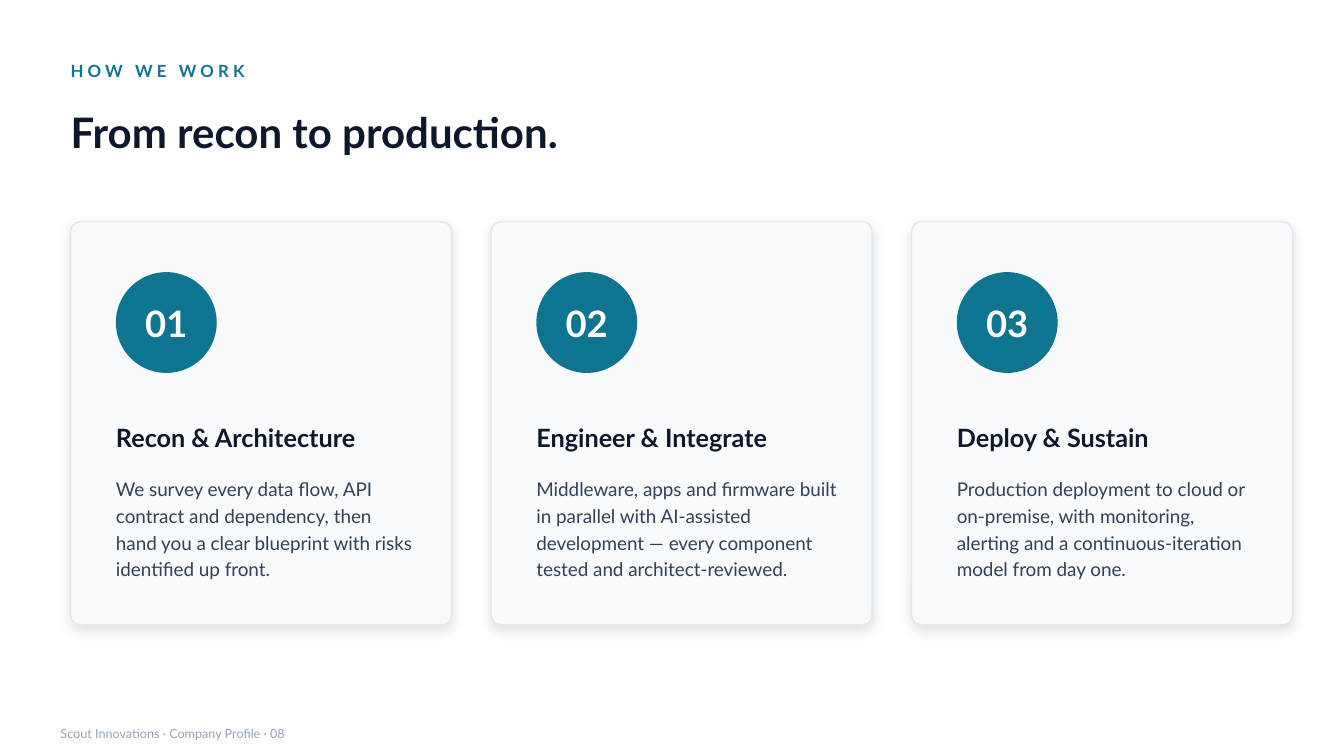
from dataclasses import dataclass

from lxml.etree import SubElement
from pptx import Presentation
from pptx.dml.color import RGBColor
from pptx.enum.shapes import MSO_SHAPE as Shape
from pptx.enum.text import MSO_ANCHOR as Anchor, MSO_AUTO_SIZE as AutoSize, PP_ALIGN as Align
from pptx.oxml.ns import qn
from pptx.util import Inches, Pt


@dataclass(frozen=True)
class Theme:
    font: str = "Lato"
    paper: str = "FFFFFF"
    accent: str = "0E7490"
    ink: str = "0F172A"
    body: str = "334155"
    muted: str = "94A3B8"
    card: str = "F8FAFC"
    border: str = "E2E8F0"
    kicker_size: float = 12
    title_size: float = 30
    number_size: float = 26
    heading_size: float = 18
    body_size: float = 13.5
    footer_size: float = 9


THEME = Theme()

STEPS = [
    ("Recon & Architecture",
     "We survey every data flow, API contract and dependency, then hand you "
     "a clear blueprint with risks identified up front."),
    ("Engineer & Integrate",
     "Middleware, apps and firmware built in parallel with AI-assisted "
     "development — every component tested and architect-reviewed."),
    ("Deploy & Sustain",
     "Production deployment to cloud or on-premise, with monitoring, "
     "alerting and a continuous-iteration model from day one."),
]


def rgb(value):
    return RGBColor.from_string(value)


def apply(target, formats):
    for name, value in formats.items():
        setattr(target, name, value)


def write(holder, text, size, color, bold=False, anchor=Anchor.MIDDLE,
          align=Align.LEFT, spacing=None):
    frame = holder.text_frame
    apply(frame, dict(word_wrap=True, auto_size=AutoSize.NONE, vertical_anchor=anchor,
                      margin_left=0, margin_top=0, margin_right=0, margin_bottom=0))
    paragraph = frame.paragraphs[0]
    apply(paragraph, dict(alignment=align, line_spacing=spacing))
    run = paragraph.add_run()
    run.text = text
    apply(run.font, dict(name=THEME.font, size=Pt(size), bold=bold))
    run.font.color.rgb = rgb(color)
    return run


def add_label(slide, box, text, size, color, **formats):
    label = slide.shapes.add_textbox(*map(Inches, box))
    return write(label, text, size, color, **formats)


def add_panel(slide, kind, box, fill):
    panel = slide.shapes.add_shape(kind, *map(Inches, box))
    panel.shadow.inherit = False
    panel.fill.solid()
    panel.fill.fore_color.rgb = rgb(fill)
    panel.line.fill.background()
    return panel


def add_soft_shadow(panel):
    effects = panel._element.spPr.find(qn("a:effectLst"))
    shadow = SubElement(effects, qn("a:outerShdw"), blurRad=str(Pt(9)), dist=str(Pt(3)),
                        dir="5400000", algn="ctr", rotWithShape="0")
    color = SubElement(shadow, qn("a:srgbClr"), val=THEME.ink)
    SubElement(color, qn("a:alpha"), val="12000")


def add_header(slide, box, kicker, headline):
    left, top, width, height = box
    kicker_run = add_label(slide, (left, top, width, 0.3), kicker,
                           THEME.kicker_size, THEME.accent, bold=True)
    kicker_run.font._element.set("spc", "300")
    title = slide.shapes.title
    apply(title, dict(left=Inches(left), top=Inches(top + 0.31),
                      width=Inches(width), height=Inches(height - 0.31)))
    write(title, headline, THEME.title_size, THEME.ink, bold=True)


def add_step(slide, box, number, heading, description):
    left, top, width, height = box
    card = add_panel(slide, Shape.ROUNDED_RECTANGLE, box, THEME.card)
    card.adjustments[0] = 0.026
    card.line.color.rgb = rgb(THEME.border)
    card.line.width = Pt(1)
    add_soft_shadow(card)

    inner = left + 0.45
    badge = add_panel(slide, Shape.OVAL, (inner, top + 0.5, 1, 1), THEME.accent)
    write(badge, f"{number:02}", THEME.number_size, THEME.paper, bold=True,
          align=Align.CENTER)
    add_label(slide, (inner, top + 1.75, width - 0.9, 0.8), heading,
              THEME.heading_size, THEME.ink, bold=True, spacing=0.98)
    add_label(slide, (inner, top + 2.5, width - 0.8, height - 2.6), description,
              THEME.body_size, THEME.body, anchor=Anchor.TOP, spacing=1.18)


def add_steps(slide, box, steps, gap):
    left, top, width, height = box
    card_width = (width - gap * (len(steps) - 1)) / len(steps)
    for index, (heading, description) in enumerate(steps):
        card_left = left + index * (card_width + gap)
        add_step(slide, (card_left, top, card_width, height), index + 1,
                 heading, description)


def add_footer(slide, box, text):
    add_label(slide, box, text, THEME.footer_size, THEME.muted)


def main():
    deck = Presentation()
    apply(deck, dict(slide_width=Inches(13.33), slide_height=Inches(7.5)))
    slide = deck.slides.add_slide(deck.slide_layouts[5])
    slide.background.fill.solid()
    slide.background.fill.fore_color.rgb = rgb(THEME.paper)
    add_header(slide, (0.7, 0.55, 12, 1.21), "HOW WE WORK", "From recon to production.")
    add_steps(slide, (0.7, 2.2, 12.12, 4), STEPS, gap=0.39)
    add_footer(slide, (0.6, 7.13, 9, 0.3), "Scout Innovations · Company Profile · 08")
    deck.save("out.pptx")


if __name__ == "__main__":
    main()
